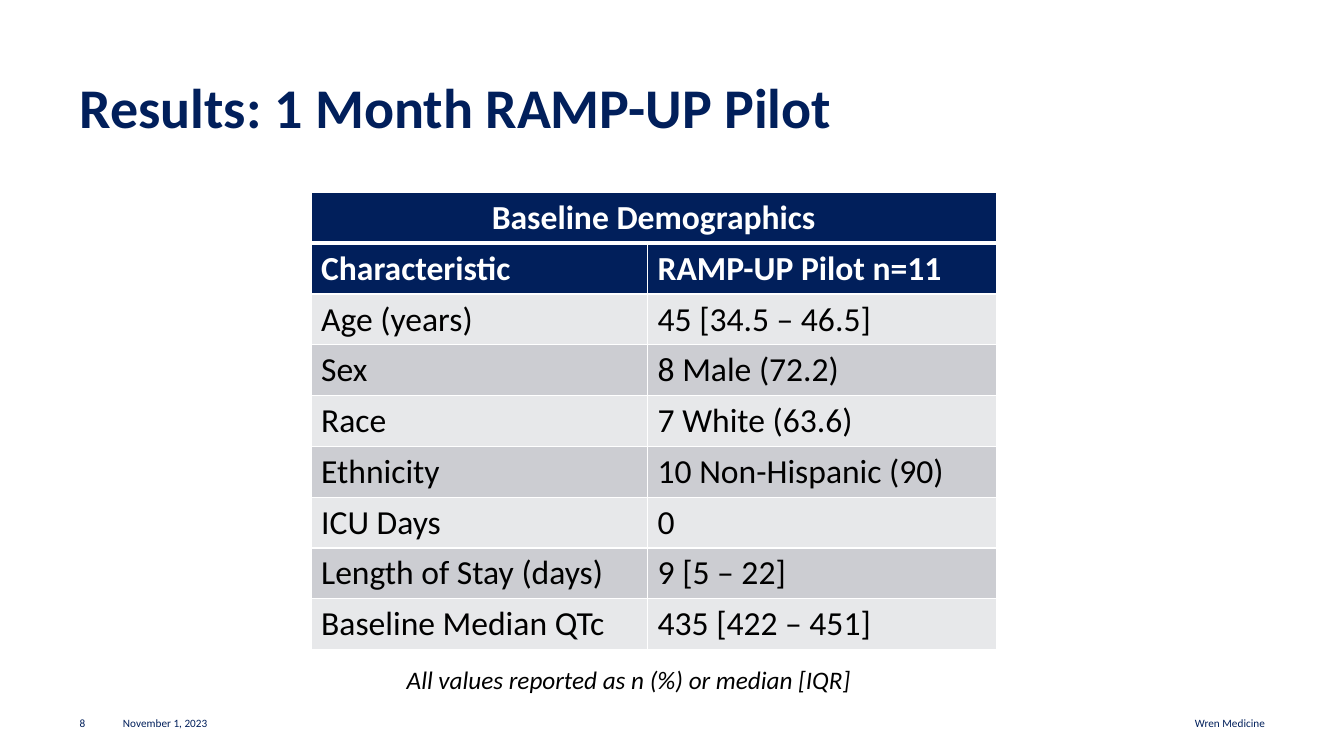
from pptx import Presentation
from pptx.dml.color import RGBColor
from pptx.enum.text import MSO_ANCHOR, PP_ALIGN
from pptx.oxml import parse_xml
from pptx.oxml.ns import nsdecls
from pptx.util import Cm, Pt

NAVY = RGBColor(0x01, 0x1F, 0x5B)
WHITE = RGBColor(0xFF, 0xFF, 0xFF)
BLACK = RGBColor(0x00, 0x00, 0x00)
LIGHT_GREY = RGBColor(0xE7, 0xE8, 0xEA)
MID_GREY = RGBColor(0xCC, 0xCD, 0xD2)
LEFT, CENTER, RIGHT = PP_ALIGN.LEFT, PP_ALIGN.CENTER, PP_ALIGN.RIGHT
TOP, BOTTOM = MSO_ANCHOR.TOP, MSO_ANCHOR.BOTTOM
FONT = "Calibri"

DEMOGRAPHICS = [
    ("Baseline Demographics", ""),
    ("Characteristic", "RAMP-UP Pilot n=11"),
    ("Age (years)", "45 [34.5 – 46.5]"),
    ("Sex", "8 Male (72.2)"),
    ("Race", "7 White (63.6)"),
    ("Ethnicity", "10 Non-Hispanic (90)"),
    ("ICU Days", "0"),
    ("Length of Stay (days)", "9 [5 – 22]"),
    ("Baseline Median QTc", "435 [422 – 451]"),
]
HEADER_ROWS = 2


def write(paragraph, text, size, color, bold=False, italic=False, align=LEFT):
    paragraph.alignment = align
    run = paragraph.add_run()
    run.text = text
    font = run.font
    font.name, font.size, font.bold, font.italic = FONT, Pt(size), bold, italic
    font.color.rgb = color


def add_text(slide, box, text, size, color, anchor=TOP, inset=True, **style):
    frame = slide.shapes.add_textbox(*map(Cm, box)).text_frame
    frame.word_wrap = True
    frame.vertical_anchor = anchor
    if not inset:
        frame.margin_left = frame.margin_right = 0
        frame.margin_top = frame.margin_bottom = 0
    write(frame.paragraphs[0], text, size, color, **style)
    return frame


def set_borders(cell, bottom_width=1):
    properties = cell._tc.get_or_add_tcPr()
    widths = {"lnL": 1, "lnR": 1, "lnT": 1, "lnB": bottom_width}
    # Borders come before the fill in the cell properties
    for position, (side, width) in enumerate(widths.items()):
        properties.insert(position, parse_xml(
            f'<a:{side} {nsdecls("a")} w="{Pt(width)}"><a:solidFill>'
            f'<a:srgbClr val="{WHITE}"/></a:solidFill></a:{side}>'))


def add_title(slide, box):
    frame = add_text(slide, box, "Results: 1 Month RAMP-UP Pilot", 40, NAVY,
                     inset=False, bold=True)
    frame.paragraphs[0].line_spacing = 0.9


def add_demographics(slide, box):
    left, top, width, height = box
    table = slide.shapes.add_table(
        len(DEMOGRAPHICS), 2, Cm(left), Cm(top), Cm(width), Cm(height)).table
    characteristic_width = 8.48
    table.columns[0].width = Cm(characteristic_width)
    table.columns[1].width = Cm(width - characteristic_width)

    for row, values in enumerate(DEMOGRAPHICS):
        is_header = row < HEADER_ROWS
        for column, value in enumerate(values):
            cell = table.cell(row, column)
            cell.fill.solid()
            band = MID_GREY if row % 2 else LIGHT_GREY
            cell.fill.fore_color.rgb = NAVY if is_header else band
            set_borders(cell, bottom_width=1 if row else 3)
            if value:
                write(cell.text_frame.paragraphs[0], value, 24,
                      WHITE if is_header else BLACK, bold=is_header,
                      align=LEFT if row else CENTER)
    table.cell(0, 0).merge(table.cell(0, 1))

    # Note under the table
    add_text(slide, (left + 2.16, top + height + 0.24, 12.95, 1.02),
             "All values reported as n (%) or median [IQR]", 18, BLACK, italic=True)


def add_footer(slide, box):
    left, top, width, height = box
    number_width, date_width, owner_width = 1.09, 7.62, 6.71
    parts = [
        ("8", left, number_width, LEFT),
        ("November 1, 2023", left + number_width, date_width, LEFT),
        ("Wren Medicine", left + width - owner_width, owner_width, RIGHT),
    ]
    for text, part_left, part_width, align in parts:
        add_text(slide, (part_left, top, part_width, height), text, 8, NAVY,
                 anchor=BOTTOM, inset=False, align=align)


def main():
    presentation = Presentation()
    presentation.slide_width, presentation.slide_height = Cm(33.87), Cm(19.05)
    slide = presentation.slides.add_slide(presentation.slide_layouts[6])
    margin, content_width = 2.01, 29.87
    add_title(slide, (margin, 2.03, content_width, 2.51))
    add_demographics(slide, (7.84, 4.85, 17.27, 11.52))
    add_footer(slide, (margin, 17.88, content_width, 0.51))
    presentation.save("out.pptx")


if __name__ == "__main__":
    main()
